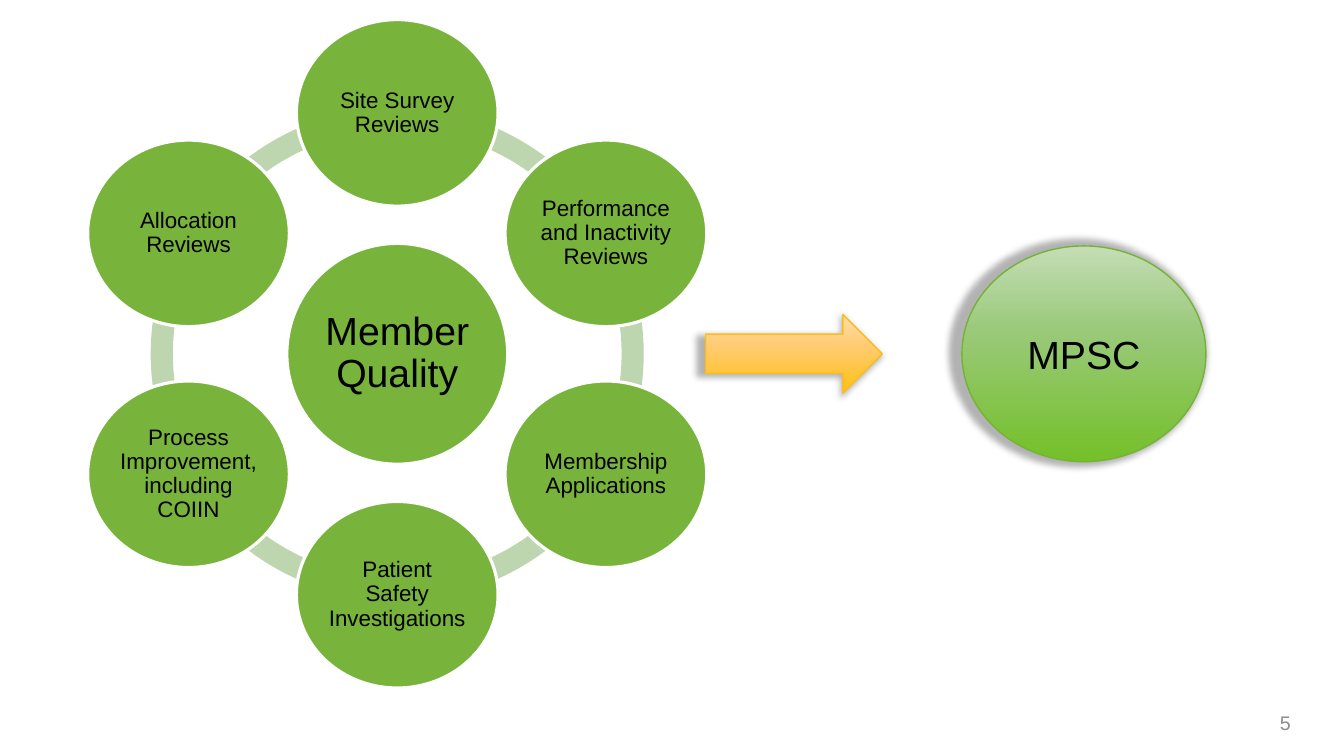
from math import cos, radians, sin
from lxml.etree import SubElement
from pptx import Presentation
from pptx.dml.color import RGBColor
from pptx.enum.shapes import MSO_SHAPE
from pptx.enum.text import MSO_ANCHOR, PP_ALIGN
from pptx.oxml.ns import qn
from pptx.util import Inches, Pt

GREEN, PALE_GREEN, WHITE, BLACK, GRAY = "78B43C", "BED6AF", "FFFFFF", "000000", "8C8C8C"
CENTER_X, CENTER_Y = 3.94, 3.51
RING_SIZE = 4.89
ORBIT = 2.39
ARC_EDGES = [18, 54, 90, 126, 162, 198]
TOPICS = [
    "Site Survey Reviews",
    "Performance and Inactivity Reviews",
    "Membership Applications",
    "Patient Safety Investigations",
    "Process Improvement, including COIIN",
    "Allocation Reviews",
]


def color(value):
    return RGBColor.from_string(value)


def add_shape(slide, kind, left, top, width, height):
    shape = slide.shapes.add_shape(
        kind, Inches(left), Inches(top), Inches(width), Inches(height))
    shape.shadow.inherit = False
    return shape


def write(shape, text, size, inset=0.1, text_color=BLACK, align=PP_ALIGN.CENTER, spacing=1.0):
    frame = shape.text_frame
    frame.word_wrap = True
    frame.vertical_anchor = MSO_ANCHOR.MIDDLE
    frame.margin_left = frame.margin_right = Inches(inset)
    frame.margin_top = frame.margin_bottom = Inches(min(inset, 0.05))
    frame.text = text
    para = frame.paragraphs[0]
    para.alignment = align
    para.line_spacing = spacing
    font = para.runs[0].font
    font.name = "Arial"
    font.size = Pt(size)
    font.color.rgb = color(text_color)


def add_ring_arc(slide, start, end):
    arc = add_shape(slide, MSO_SHAPE.BLOCK_ARC, CENTER_X - RING_SIZE / 2,
                    CENTER_Y - RING_SIZE / 2, RING_SIZE, RING_SIZE)
    # Angles are stored in 1/60000 degree, adjustments in 1/100000
    arc.adjustments[0] = start * 0.6
    arc.adjustments[1] = end * 0.6
    arc.adjustments[2] = 0.045
    arc.fill.solid()
    arc.fill.fore_color.rgb = color(PALE_GREEN)
    arc.line.fill.background()


def add_bubble(slide, text, x, y, width, height, size, inset):
    """Add a green ellipse centred on x, y."""
    bubble = add_shape(slide, MSO_SHAPE.OVAL, x - width / 2, y - height / 2, width, height)
    bubble.fill.solid()
    bubble.fill.fore_color.rgb = color(GREEN)
    bubble.line.color.rgb = color(WHITE)
    bubble.line.width = Pt(2.25)
    write(bubble, text, size, inset, spacing=0.9)


def add_glossy_shape(slide, kind, left, top, width, height, stops, line_color):
    """Add a shape with an upward gradient and a soft shadow."""
    shape = add_shape(slide, kind, left, top, width, height)
    shape.line.color.rgb = color(line_color)
    shape.line.width = Pt(1)
    shape.fill.gradient()
    shape.fill.gradient_angle = 90
    properties = shape._element.spPr
    stop_list = properties.find(qn("a:gradFill")).find(qn("a:gsLst"))
    for stop in list(stop_list):
        stop_list.remove(stop)
    for position, value in stops:
        stop = SubElement(stop_list, qn("a:gs"), pos=str(position * 1000))
        SubElement(stop, qn("a:srgbClr"), val=value)
    shadow = SubElement(
        properties.find(qn("a:effectLst")), qn("a:outerShdw"), blurRad=str(Pt(5)),
        dist=str(Pt(3)), dir="5400000", sx="105000", sy="105000", algn="br", rotWithShape="0")
    shadow_color = SubElement(shadow, qn("a:srgbClr"), val=BLACK)
    SubElement(shadow_color, qn("a:alpha"), val="30000")
    return shape


def add_quality_cycle(slide):
    for start, end in zip(ARC_EDGES, ARC_EDGES[1:] + ARC_EDGES[:1]):
        add_ring_arc(slide, start, end)
    add_bubble(slide, "Member Quality", CENTER_X, CENTER_Y, 2.19, 2.19, 28, 0.04)
    for index, topic in enumerate(TOPICS):
        angle = radians(index * 360 / len(TOPICS))
        add_bubble(slide, topic, CENTER_X + ORBIT * sin(angle),
                   CENTER_Y - ORBIT * cos(angle), 2, 1.85, 16, 0.02)


def add_slide_number(slide, number):
    box = slide.shapes.add_textbox(Inches(10.64), Inches(6.97), Inches(2.26), Inches(0.4))
    write(box, number, 14, text_color=GRAY, align=PP_ALIGN.RIGHT)


def main():
    deck = Presentation()
    deck.slide_width, deck.slide_height = Inches(13.33), Inches(7.5)
    slide = deck.slides.add_slide(deck.slide_layouts[6])
    add_quality_cycle(slide)
    add_slide_number(slide, "5")
    add_glossy_shape(slide, MSO_SHAPE.RIGHT_ARROW, 7, 3.12, 1.75, 0.78,
                     [(0, "FFC011"), (60, "FFCB71"), (100, "FFDEB0")], "FBBE18")
    committee = add_glossy_shape(slide, MSO_SHAPE.OVAL, 9.54, 2.44, 2.42, 2.14,
                                 [(0, "74C029"), (60, "99C979"), (100, "C4DDB5")], "75B338")
    write(committee, "MPSC", 28)
    deck.save("out.pptx")


if __name__ == "__main__":
    main()
